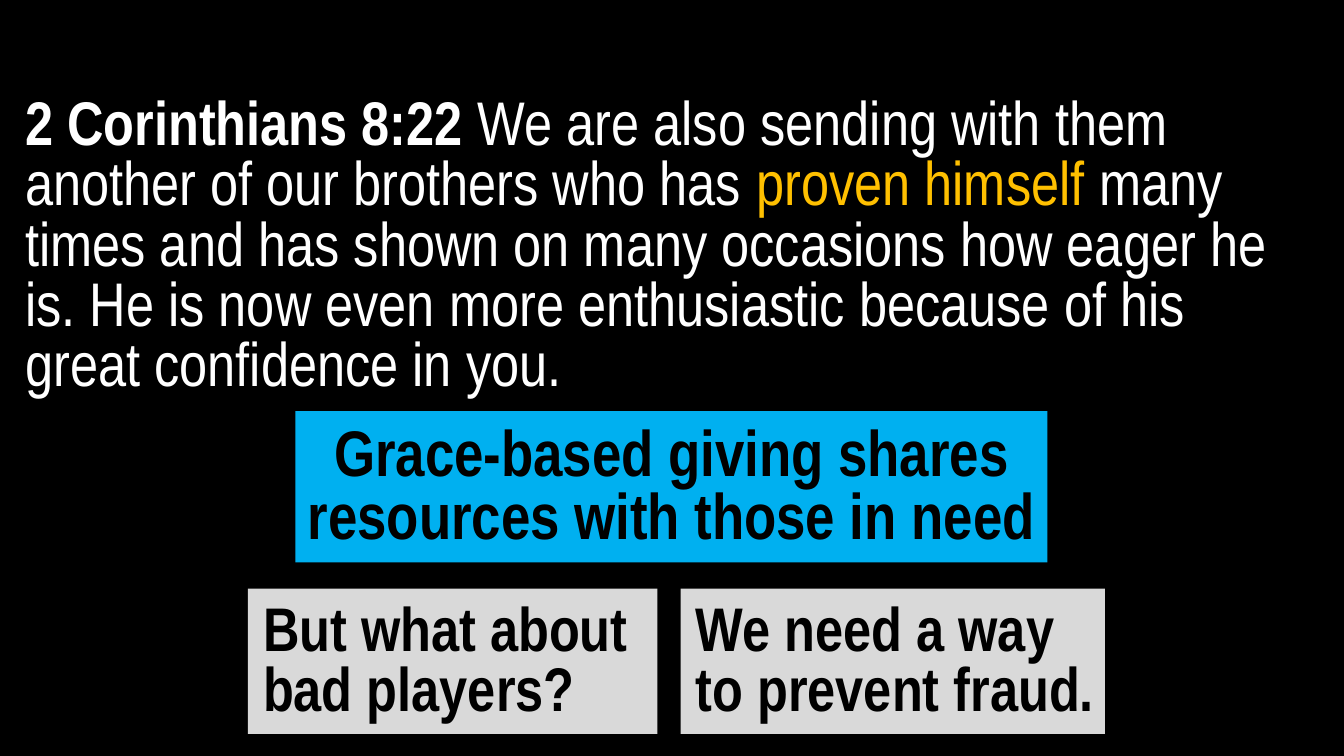
import pptx
import pptx.dml.color
import pptx.enum.shapes
import pptx.enum.text
import pptx.oxml.xmlchemy
import pptx.util
from lxml import etree

Inches, Pt = pptx.util.Inches, pptx.util.Pt
ALIGN = pptx.enum.text.PP_ALIGN
COLORS = {"black": "000000", "white": "FFFFFF", "gold": "FFC000",
          "blue": "00B0F0", "gray": "D9D9D9"}


def rgb(name):
    return pptx.dml.color.RGBColor.from_string(COLORS[name])


def write(frame, runs, margins, size, line, after=0, alignment=ALIGN.LEFT):
    """Fill a frame with one paragraph of (text, color, bold) runs."""
    frame_format = dict(zip(("margin_left", "margin_top", "margin_right", "margin_bottom"),
                            map(Inches, margins)))
    frame_format.update(word_wrap=True, vertical_anchor=pptx.enum.text.MSO_ANCHOR.TOP,
                        auto_size=pptx.enum.text.MSO_AUTO_SIZE.NONE)
    for name, value in frame_format.items():
        setattr(frame, name, value)
    paragraph = frame.paragraphs[0]
    paragraph_format = {"alignment": alignment, "line_spacing": Pt(line),
                        "space_before": Pt(0), "space_after": Pt(after)}
    for name, value in paragraph_format.items():
        setattr(paragraph, name, value)
    for text, color, bold in runs:
        run = paragraph.add_run()
        run.text = text
        for name, value in {"name": "Arial Narrow", "size": Pt(size), "bold": bold}.items():
            setattr(run.font, name, value)
        run.font.color.rgb = rgb(color)
    return paragraph


presentation = pptx.Presentation()
presentation.slide_width, presentation.slide_height = Inches(13.33), Inches(7.5)
slide = presentation.slides.add_slide(presentation.slide_layouts[1])
slide.background.fill.solid()
slide.background.fill.fore_color.rgb = rgb("black")

# The slide has no title
title = slide.shapes.title.element
title.getparent().remove(title)

# Verse
verse = slide.placeholders[1]
verse.left, verse.top, verse.width, verse.height = map(Inches, (0.11, 0.92, 12.96, 3.1))
paragraph = write(verse.text_frame, [
    ("2 Corinthians 8:22 ", "white", True),
    ("We are also sending with them another of our brothers who has ", "white", False),
    ("proven himself", "gold", False),
    (" many times and has shown on many occasions how eager he is. He is now even more "
     "enthusiastic because of his great confidence in you.", "white", False),
], (0.1, 0.05, 0.1, 0.05), size=44, line=43, after=12)
properties = paragraph._p.get_or_add_pPr()
properties.set("marL", str(Inches(0.04)))
properties.set("indent", "0")
etree.SubElement(properties, pptx.oxml.ns.qn("a:buNone"))

# Callouts: text, position, fill, left margin, size, alignment
answer_top, answer_height = 5.84, 1.44
callouts = [
    ("But what about bad players?", (2.46, answer_top, 4.06, answer_height),
     "gray", 0.15, 44, ALIGN.LEFT),
    ("Grace-based giving shares resources with those in need", (2.93, 4.08, 7.46, 1.5),
     "blue", 0.05, 46, ALIGN.CENTER),
    ("We need a way to prevent fraud.", (6.75, answer_top, 4.21, answer_height),
     "gray", 0.15, 44, ALIGN.LEFT),
]
for text, position, fill, margin, size, alignment in callouts:
    callout = slide.shapes.add_shape(pptx.enum.shapes.MSO_SHAPE.RECTANGLE,
                                     *map(Inches, position))
    callout.shadow.inherit = False
    callout.fill.solid()
    callout.fill.fore_color.rgb = rgb(fill)
    callout.line.fill.background()
    write(callout.text_frame, [(text, "black", True)], (margin, 0.15, 0.05, 0.05),
          size, line=size - 1, alignment=alignment)

presentation.save("out.pptx")
